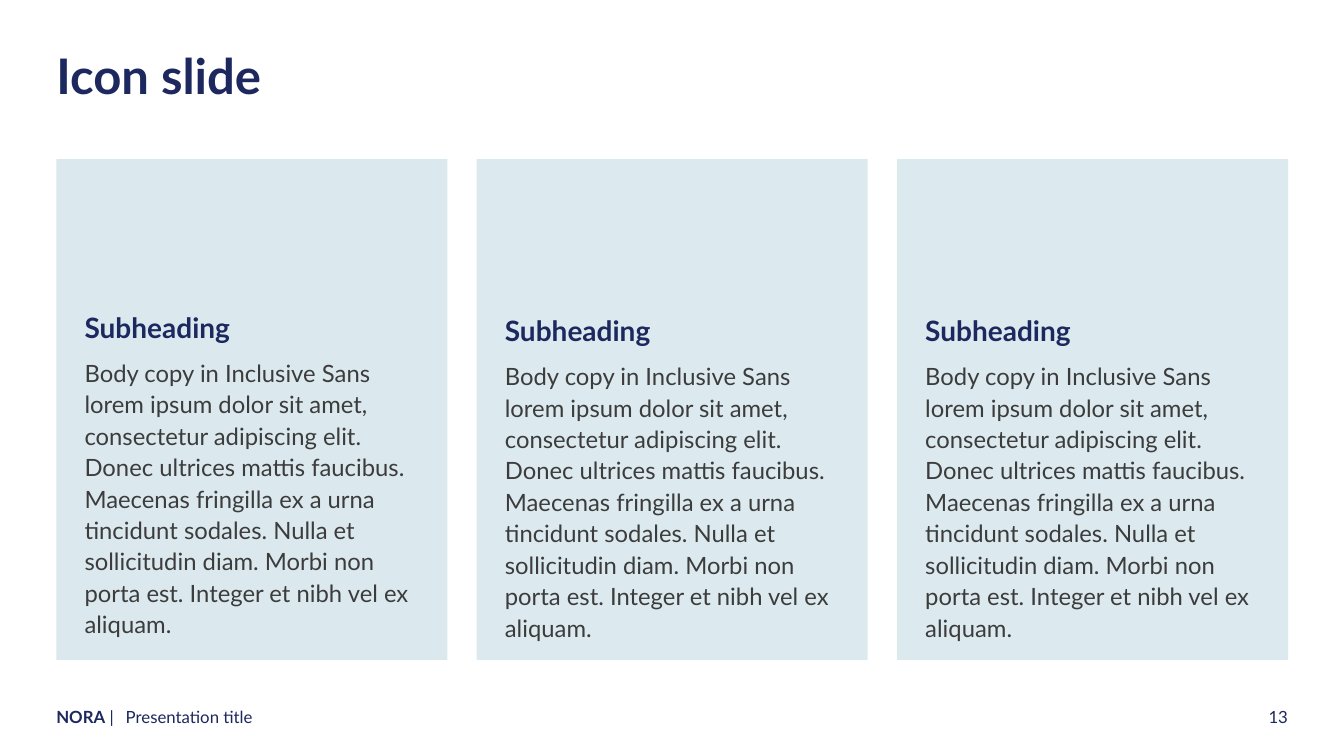
"""Build the three-card icon slide."""
from collections import namedtuple
from dataclasses import dataclass

from lxml.etree import SubElement
from pptx import Presentation
from pptx.dml.color import RGBColor
from pptx.enum.text import MSO_ANCHOR, MSO_AUTO_SIZE, PP_ALIGN
from pptx.oxml.ns import qn
from pptx.util import Cm, Pt

Box = namedtuple("Box", "left top width height")


@dataclass(frozen=True)
class Theme:
    """Hold the colours, typeface and type sizes of the slide."""
    navy: RGBColor = RGBColor(0x1C, 0x28, 0x5E)
    grey: RGBColor = RGBColor(0x3C, 0x3C, 0x3C)
    pale_blue: RGBColor = RGBColor(0xC5, 0xDC, 0xE5)
    typeface: str = "Lato"
    title: Pt = Pt(35)
    subheading: Pt = Pt(20)
    body: Pt = Pt(17)
    footer: Pt = Pt(12)


THEME = Theme()
BODY_COPY = (
    "Body copy in Inclusive Sans lorem ipsum dolor sit amet, consectetur "
    "adipiscing elit. Donec ultrices mattis faucibus. Maecenas fringilla ex a "
    "urna tincidunt sodales. Nulla et sollicitudin diam. Morbi non porta est. "
    "Integer et nibh vel ex aliquam."
)
CARD_TEXT = [("Subheading", BODY_COPY)] * 3
CARD_INSETS = [3.91, 3.99, 3.99]
CARD_OPACITIES = [61, 60, 60]
CARD_GAP = 0.74


def apply_format(target, values):
    """Set each named attribute of the target."""
    for attribute, value in values.items():
        setattr(target, attribute, value)


def place(region, box):
    """Move a region to a box given in centimetres."""
    apply_format(region, {side: Cm(length) for side, length in box._asdict().items()})


def prepare_frame(region, insets=(0, 0, 0, 0)):
    """Give a region fixed-size, top-anchored text with the given insets."""
    left, top, right, bottom = insets
    apply_format(region.text_frame, {
        "word_wrap": True,
        "auto_size": MSO_AUTO_SIZE.NONE,
        "vertical_anchor": MSO_ANCHOR.TOP,
        "margin_left": Cm(left),
        "margin_top": Cm(top),
        "margin_right": Cm(right),
        "margin_bottom": Cm(bottom),
    })
    return region.text_frame


def write_run(paragraph, text, size, color=THEME.navy, bold=False):
    """Append a styled run to a paragraph."""
    run = paragraph.add_run()
    run.text = text
    apply_format(run.font, {"name": THEME.typeface, "size": size, "bold": bold})
    run.font.color.rgb = color


def clear_bullet(paragraph):
    """Remove the bullet and indent inherited by a paragraph."""
    properties = paragraph._p.get_or_add_pPr()
    properties.set("marL", "0")
    properties.set("indent", "0")
    SubElement(properties, qn("a:buNone"))


def add_title(slide, box):
    """Fill the title placeholder."""
    title = slide.shapes.title
    place(title, box)
    paragraph = prepare_frame(title).paragraphs[0]
    apply_format(paragraph, {"alignment": PP_ALIGN.LEFT, "line_spacing": 0.9})
    write_run(paragraph, "Icon slide", THEME.title, bold=True)


def add_card(card, box, text, inset, opacity):
    """Turn a body placeholder into a tinted card with room for an icon."""
    place(card, box)
    card.fill.solid()
    card.fill.fore_color.rgb = THEME.pale_blue
    tint = card.fill._xPr.find(f".//{qn('a:srgbClr')}")
    SubElement(tint, qn("a:alpha")).set("val", str(opacity * 1000))

    frame = prepare_frame(card, (0.71, inset, 0.71, 0.71))
    subheading, body = frame.paragraphs[0], frame.add_paragraph()
    layouts = {
        subheading: {"line_spacing": 0.9, "space_after": Pt(8)},
        body: {"level": 1, "line_spacing": 1.1, "space_after": Pt(10)},
    }
    for paragraph, layout in layouts.items():
        clear_bullet(paragraph)
        apply_format(paragraph, {"alignment": PP_ALIGN.LEFT, "space_before": Pt(0), **layout})
    write_run(subheading, text[0], THEME.subheading, bold=True)
    write_run(body, text[1], THEME.body, THEME.grey)


def add_cards(slide, box):
    """Spread the body placeholders as equal cards and remove the spare one."""
    *cards, spare = [p for p in slide.placeholders if p.placeholder_format.idx in range(1, 5)]
    spare.element.getparent().remove(spare.element)
    width = (box.width - CARD_GAP * (len(cards) - 1)) / len(cards)
    details = zip(cards, CARD_TEXT, CARD_INSETS, CARD_OPACITIES)
    for column, (card, text, inset, opacity) in enumerate(details):
        left = box.left + column * (width + CARD_GAP)
        add_card(card, box._replace(left=left, width=width), text, inset, opacity)


def add_footer(slide, box):
    """Add the organisation, presentation title and page number."""
    parts = [
        (0, 1.75, PP_ALIGN.LEFT, [("NORA", True), (" |", False)]),
        (1.75, 11.53, PP_ALIGN.LEFT, [("Presentation title", False)]),
        (box.width - 2.49, 2.49, PP_ALIGN.RIGHT, [("13", False)]),
    ]
    for offset, width, alignment, runs in parts:
        part = slide.shapes.add_textbox(0, 0, 0, 0)
        place(part, box._replace(left=box.left + offset, width=width))
        paragraph = prepare_frame(part).paragraphs[0]
        paragraph.alignment = alignment
        for text, bold in runs:
            write_run(paragraph, text, THEME.footer, bold=bold)


def main():
    """Build and save the slide."""
    deck = Presentation()
    apply_format(deck, {"slide_width": Cm(33.87), "slide_height": Cm(19.05)})
    slide = deck.slides.add_slide(deck.slide_layouts.get_by_name("Comparison"))
    add_title(slide, Box(1.42, 1.32, 30.05, 1.42))
    add_cards(slide, Box(1.42, 4.01, 31.04, 12.62))
    add_footer(slide, Box(1.42, 17.81, 31.04, 0.51))
    deck.save("out.pptx")


if __name__ == "__main__":
    main()
